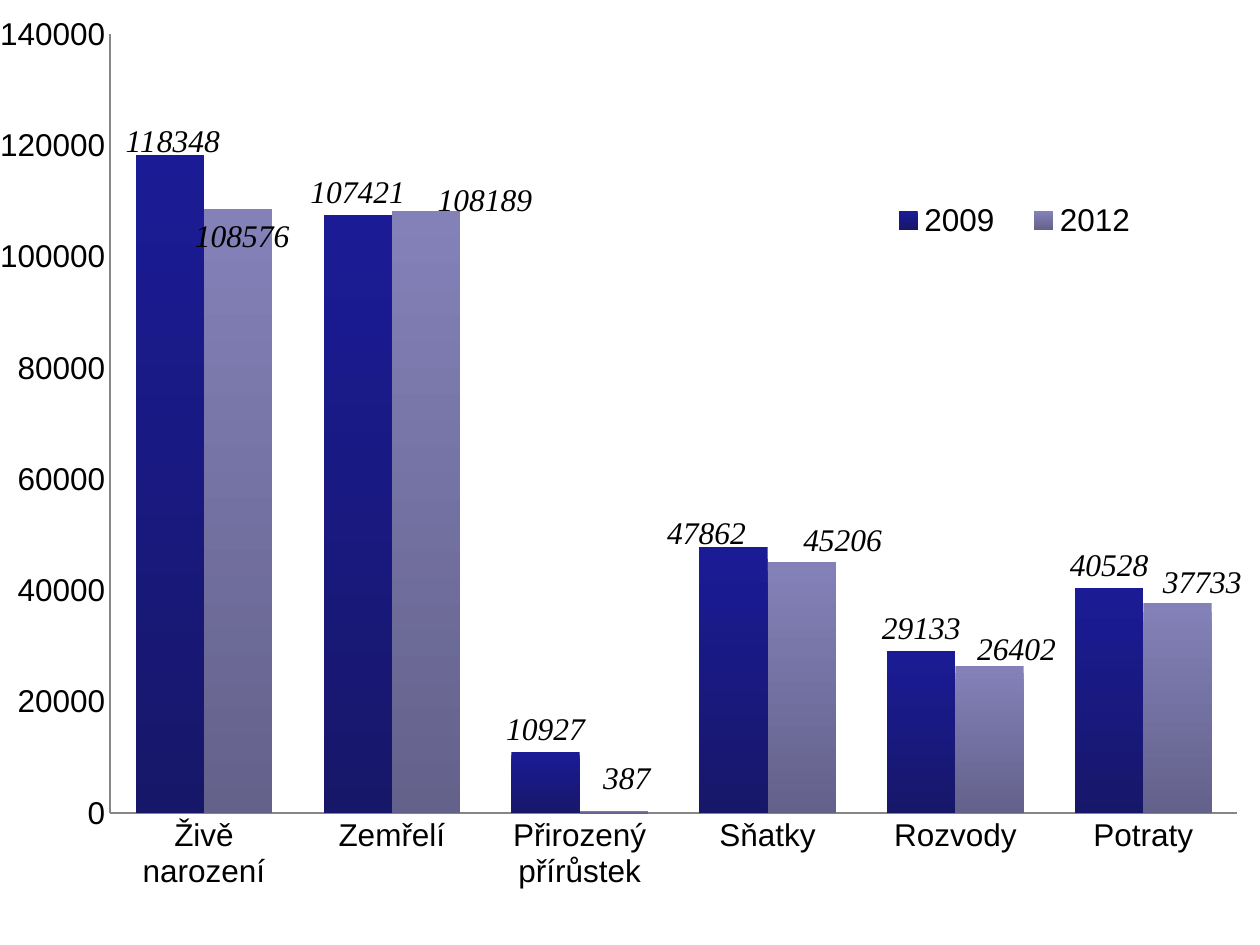
import pptx
import pptx.chart.data
import pptx.dml.color
import pptx.enum.chart
import pptx.oxml
import pptx.util
from pptx.util import Pt

COLOURS = {
    "text": "000000",
    "axis": "868686",
    "2009 top": "1B1B96",
    "2009 bottom": "17176A",
    "2012 top": "8381B8",
    "2012 bottom": "64618B",
}

EVENTS = ["Živě narození", "Zemřelí", "Přirozený přírůstek",
          "Sňatky", "Rozvody", "Potraty"]
YEARS = {
    "2009": [118348, 107421, 10927, 47862, 29133, 40528],
    "2012": [108576, 108189, 387, 45206, 26402, 37733],
}
# Label shifts per column, as percentages of the chart's width and height
LABEL_SHIFTS = {
    "2009": {0: (0.24, 0.97), 3: (-2.14, 0.97)},
    "2012": {0: (0.32, 5.38), 1: (4.68, 1.29), 2: (1.03, -1.08),
             3: (3.25, 0.11), 4: (2.14, 0.65), 5: (1.98, 0.22)},
}


def rgb(name):
    return pptx.dml.color.RGBColor.from_string(COLOURS[name])


def format_font(font, name="Arial", size=18, italic=False, colour="text"):
    font.name = name
    font.size = Pt(size)
    font.italic = italic
    font.bold = False
    font.color.rgb = rgb(colour)


def manual_layout(x, y, w=None, h=None, inner=False, edge=True):
    """Return a c:layout element; all lengths are fractions of the chart."""
    settings = []
    if inner:
        settings.append(("layoutTarget", "inner"))
    if edge:
        settings += [("xMode", "edge"), ("yMode", "edge")]
    settings += [("x", x), ("y", y)]
    if w is not None:
        settings += [("w", w), ("h", h)]
    body = "".join(f'<c:{tag} val="{value}"/>' for tag, value in settings)
    namespace = "http://schemas.openxmlformats.org/drawingml/2006/chart"
    return pptx.oxml.parse_xml(
        f'<c:layout xmlns:c="{namespace}">'
        f"<c:manualLayout>{body}</c:manualLayout></c:layout>")


def add_columns(slide):
    data = pptx.chart.data.CategoryChartData()
    data.categories = EVENTS
    for year, counts in YEARS.items():
        data.add_series(year, counts)
    chart = slide.shapes.add_chart(
        pptx.enum.chart.XL_CHART_TYPE.COLUMN_CLUSTERED,
        Pt(0), Pt(9.4), Pt(720), Pt(530.6), data).chart
    chart.has_title = False
    format_font(chart.font)

    plot = chart.plots[0]
    plot.gap_width = 75
    plot.overlap = 0
    plot.vary_by_categories = False
    plot_area = chart._chartSpace.chart.plotArea
    for old_layout in plot_area.xpath("c:layout"):
        plot_area.remove(old_layout)
    plot_area.insert(0, manual_layout(0.087, 0.019, 0.895, 0.839, inner=True))
    return chart


def style_axes(chart):
    for axis in (chart.category_axis, chart.value_axis):
        axis.has_major_gridlines = False
        axis.major_tick_mark = pptx.enum.chart.XL_TICK_MARK.NONE
        axis.minor_tick_mark = pptx.enum.chart.XL_TICK_MARK.NONE
        axis.format.line.color.rgb = rgb("axis")
        axis.format.line.width = Pt(0.75)
        format_font(axis.tick_labels.font)
    chart.value_axis.minimum_scale = 0
    chart.value_axis.maximum_scale = 140000
    chart.value_axis.major_unit = 20000


def style_year(series):
    # Columns shaded from top to bottom
    fill = series.format.fill
    fill.gradient()
    fill.gradient_angle = 270
    for stop, end in zip(fill.gradient_stops, ("top", "bottom")):
        stop.color.rgb = rgb(f"{series.name} {end}")
    series.format.line.fill.background()

    # Value labels, some of them moved
    outside = pptx.enum.chart.XL_LABEL_POSITION.OUTSIDE_END
    labels = series.data_labels
    labels.show_value = True
    labels.position = outside
    format_font(labels.font, name="Times New Roman", italic=True)
    for index, (right, down) in LABEL_SHIFTS[series.name].items():
        label = series.points[index].data_label
        label.position = outside
        format_font(label.font, name="Times New Roman", italic=True)
        index_mark = series._element.xpath(
            f"c:dLbls/c:dLbl/c:idx[@val='{index}']")[0]
        index_mark.addnext(
            manual_layout(round(right / 100, 4), round(down / 100, 4), edge=False))


def add_legend(chart):
    chart.has_legend = True
    legend = chart.legend
    legend.position = pptx.enum.chart.XL_LEGEND_POSITION.BOTTOM
    legend.include_in_layout = False
    format_font(legend.font)
    for old_layout in legend._element.xpath("c:layout"):
        legend._element.remove(old_layout)
    legend._element.xpath("c:legendPos")[0].addnext(
        manual_layout(0.69, 0.19, 0.23, 0.06))


def main():
    deck = pptx.Presentation()
    deck.slide_width, deck.slide_height = Pt(720), Pt(540)
    slide = deck.slides.add_slide(deck.slide_layouts[6])

    chart = add_columns(slide)
    style_axes(chart)
    for series in chart.plots[0].series:
        style_year(series)
    add_legend(chart)

    deck.save("out.pptx")


if __name__ == "__main__":
    main()
